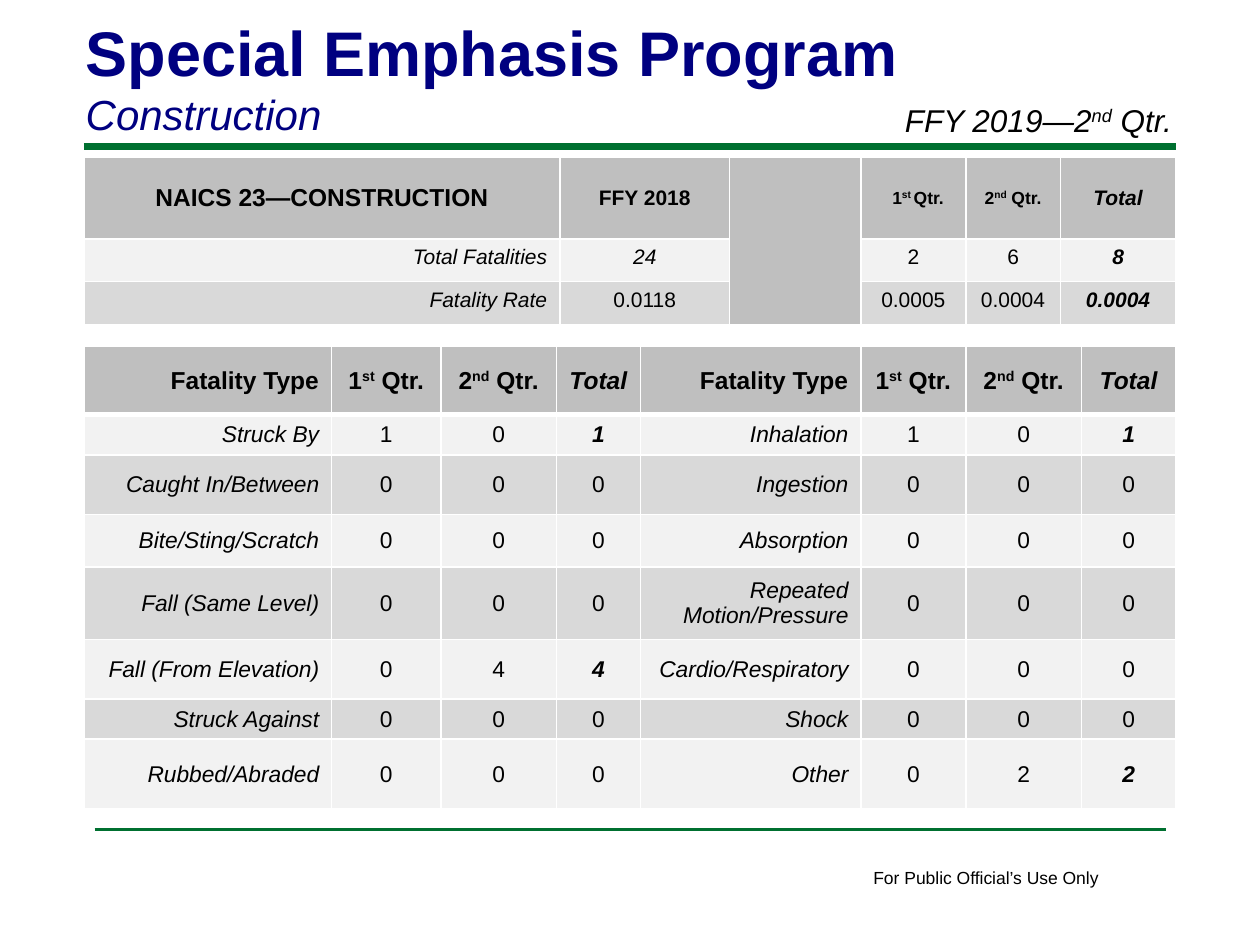
"""Build the construction fatalities slide with its summary and fatality type tables."""
from lxml.etree import SubElement
from pptx import Presentation
from pptx.dml.color import RGBColor
from pptx.enum.shapes import MSO_CONNECTOR
from pptx.enum.text import MSO_ANCHOR as ANCHOR, MSO_AUTO_SIZE as AUTO, PP_ALIGN as ALIGN
from pptx.oxml.ns import qn
from pptx.util import Pt

rgb = RGBColor.from_string
GREEN, NAVY, BLACK, WHITE = "007030", "000080", "000000", "FFFFFF"
HEAD, LIGHT, DARK = "BFBFBF", "F2F2F2", "D9D9D9"


def add_runs(p, text, size, color=BLACK, bold=False, italic=False):
    """Add text to a paragraph, raising the parts between carets."""
    for i, part in enumerate(text.split("^")):
        r = p.add_run()
        r.text = part
        r.font.name, r.font.size = "Arial", Pt(size)
        r.font.bold, r.font.italic = bold, italic
        r.font.color.rgb = rgb(color)
        if i % 2:
            r._r.get_or_add_rPr().set("baseline", "30000")


def add_grid(sl, top, widths, heights, rows, head_sizes, body_size, body_anchor, head_line):
    """Add a table whose first row names its label, count and total columns."""
    sp = sl.shapes.add_table(len(rows), len(widths), Pt(48), Pt(top), Pt(sum(widths)), Pt(sum(heights)))
    tbl = sp.table
    tbl.first_row = tbl.horz_banding = False
    for col, width in zip(tbl.columns, widths):
        col.width = Pt(width)
    for row, height in zip(tbl.rows, heights):
        row.height = Pt(height)
    for i, row in enumerate(rows):
        for j, text in enumerate(row):
            cell = tbl.cell(i, j)
            p = cell.text_frame.paragraphs[0]
            if not text:
                SubElement(p._p, qn("a:endParaRPr"), sz="1000")
                if i:
                    continue
            tcPr = cell._tc.get_or_add_tcPr()
            for side in ("lnL", "lnR", "lnT", "lnB"):
                heavy = (i, side) in ((0, "lnB"), (1, "lnT"))
                ln = SubElement(tcPr, qn(f"a:{side}"), w=str(Pt(head_line if heavy else 1)))
                SubElement(SubElement(ln, qn("a:solidFill")), qn("a:srgbClr"), val=WHITE)
            cell.fill.solid()
            cell.fill.fore_color.rgb = rgb(HEAD if i == 0 else (DARK, LIGHT)[i % 2])
            cell.vertical_anchor = ANCHOR.MIDDLE if i == 0 else body_anchor
            if not text:
                continue
            is_label = j == 0 or rows[0][j] == "Fatality Type"
            is_total = rows[0][j] == "Total" and text != "0"
            right = is_label and (i > 0 or text == "Fatality Type")
            p.alignment = ALIGN.RIGHT if right else ALIGN.CENTER
            add_runs(p, text, body_size if i else head_sizes[j],
                     bold=i == 0 or is_total, italic=is_total or (is_label and i > 0))
    return tbl


prs = Presentation()
prs.slide_width, prs.slide_height = Pt(720), Pt(540)
sl = prs.slides.add_slide(prs.slide_layouts[5])

for x1, x2, y, width in ((48, 672, 84, 4), (54, 666, 474, 2)):
    line = sl.shapes.add_connector(MSO_CONNECTOR.STRAIGHT, Pt(x1), Pt(y), Pt(x2), Pt(y))
    line.line.color.rgb = rgb(GREEN)
    line.line.width = Pt(width)
    SubElement(line._element.spPr, qn("a:effectLst"))

title = sl.shapes.title
title.left, title.top, title.width, title.height = Pt(41.75), Pt(4), Pt(594), Pt(80)
tf = title.text_frame
tf.auto_size, tf.vertical_anchor = AUTO.NONE, ANCHOR.TOP
add_runs(tf.paragraphs[0], "Special Emphasis Program", 36, NAVY, bold=True)
add_runs(tf.add_paragraph(), "Construction", 24, NAVY, italic=True)
for p in tf.paragraphs:
    p.alignment = ALIGN.LEFT
    p.space_before = Pt(0)

summary = add_grid(
    sl, 90, (272, 97, 75, 60, 54, 66), (46.5, 24.5, 24.5),
    (("NAICS 23—CONSTRUCTION", "FFY 2018", "", "1^st ^Qtr.", "2^nd^ Qtr.", "Total"),
     ("Total Fatalities", "24", "", "2", "6", "8"),
     ("Fatality Rate", "0.0118", "", "0.0005", "0.0004", "0.0004")),
    (14, 12, 12, 10, 10, 12), 12, ANCHOR.TOP, 1)
summary.cell(0, 2).merge(summary.cell(2, 2))
summary.cell(0, 3).margin_left = Pt(12.5)
summary.cell(1, 1).text_frame.paragraphs[0].runs[0].font.italic = True

add_grid(
    sl, 198, (141.5, 62.5, 66, 48, 126, 60, 66, 54),
    (39, 23, 34, 30, 41.5, 34, 23, 40),
    (("Fatality Type", "1^st^ Qtr.", "2^nd^ Qtr.", "Total") * 2,
     ("Struck By", "1", "0", "1", "Inhalation", "1", "0", "1"),
     ("Caught In/Between", "0", "0", "0", "Ingestion", "0", "0", "0"),
     ("Bite/Sting/Scratch", "0", "0", "0", "Absorption", "0", "0", "0"),
     ("Fall (Same Level)", "0", "0", "0", "Repeated Motion/Pressure", "0", "0", "0"),
     ("Fall (From Elevation)", "0", "4", "4", "Cardio/Respiratory", "0", "0", "0"),
     ("Struck Against", "0", "0", "0", "Shock", "0", "0", "0"),
     ("Rubbed/Abraded", "0", "0", "0", "Other", "0", "2", "2")),
    (14,) * 8, 13, ANCHOR.MIDDLE, 3)

for text, x, y, w, h, size, italic, wrap in (
        ("FFY 2019—2^nd^ Qtr.", 510, 54, 180, 29, 18, True, True),
        ("For Public Official’s Use Only", 492, 492, 144.5, 19.5, 10, False, False)):
    tf = sl.shapes.add_textbox(Pt(x), Pt(y), Pt(w), Pt(h)).text_frame
    tf.word_wrap = wrap
    add_runs(tf.paragraphs[0], text, size, italic=italic)

prs.save("out.pptx")
